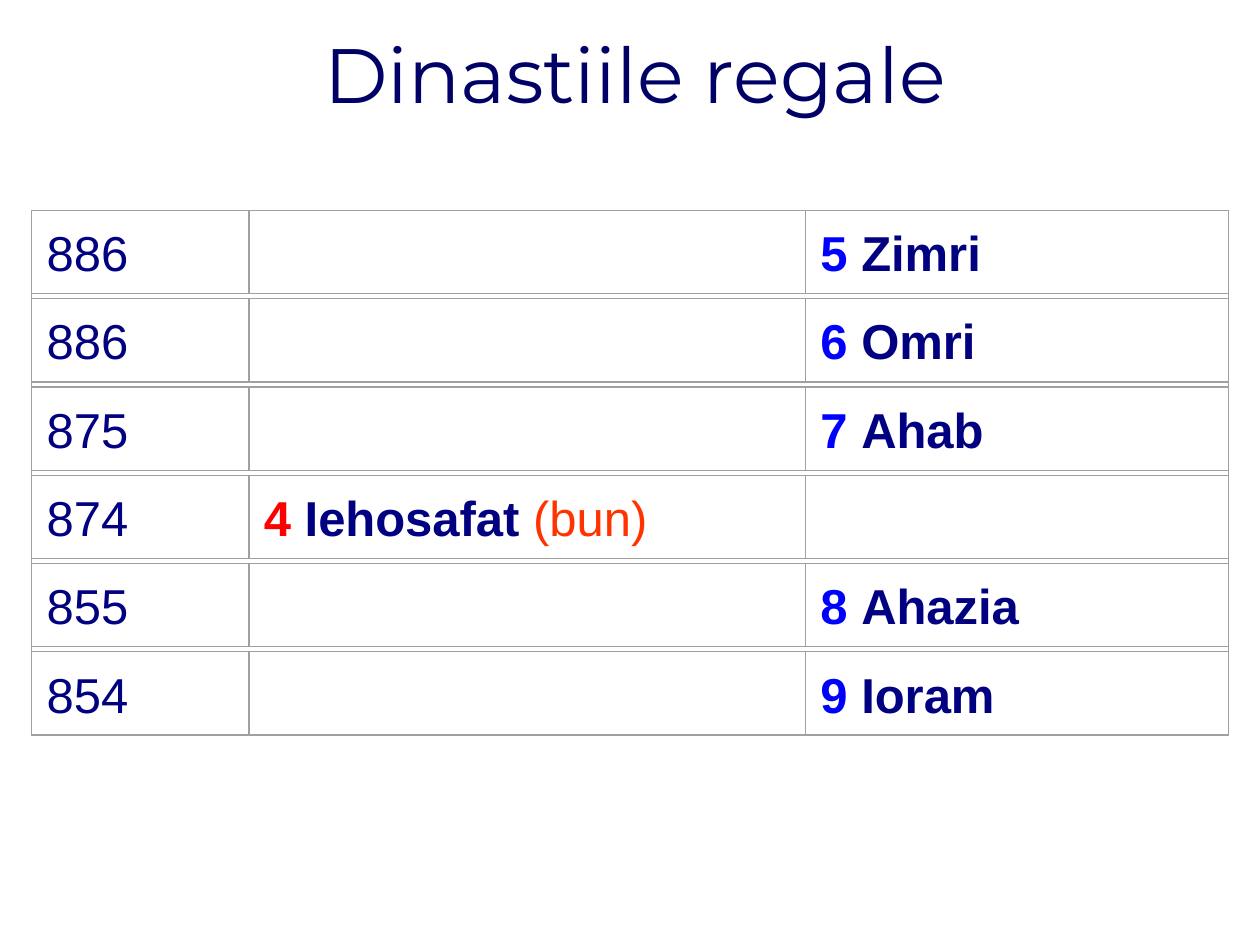
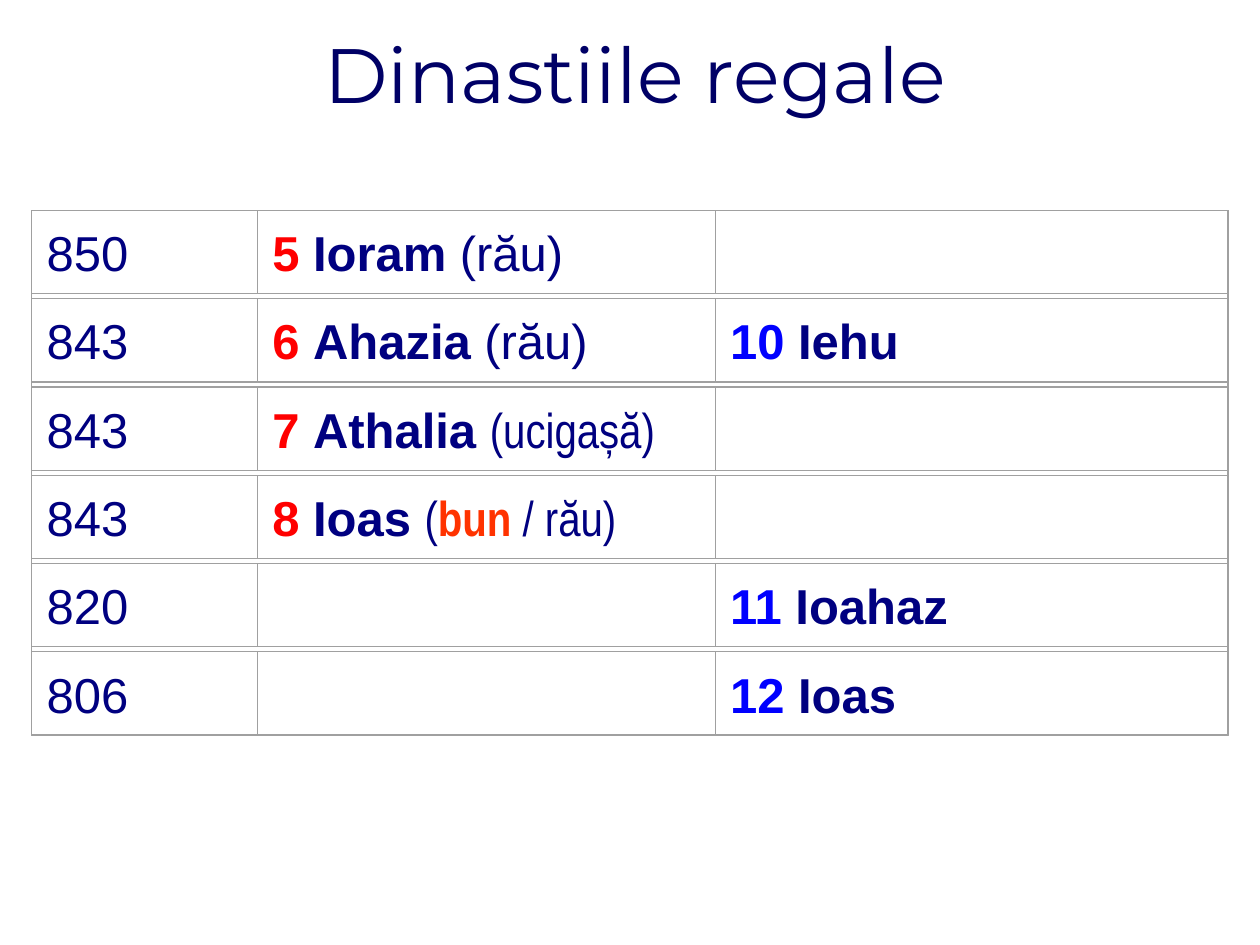
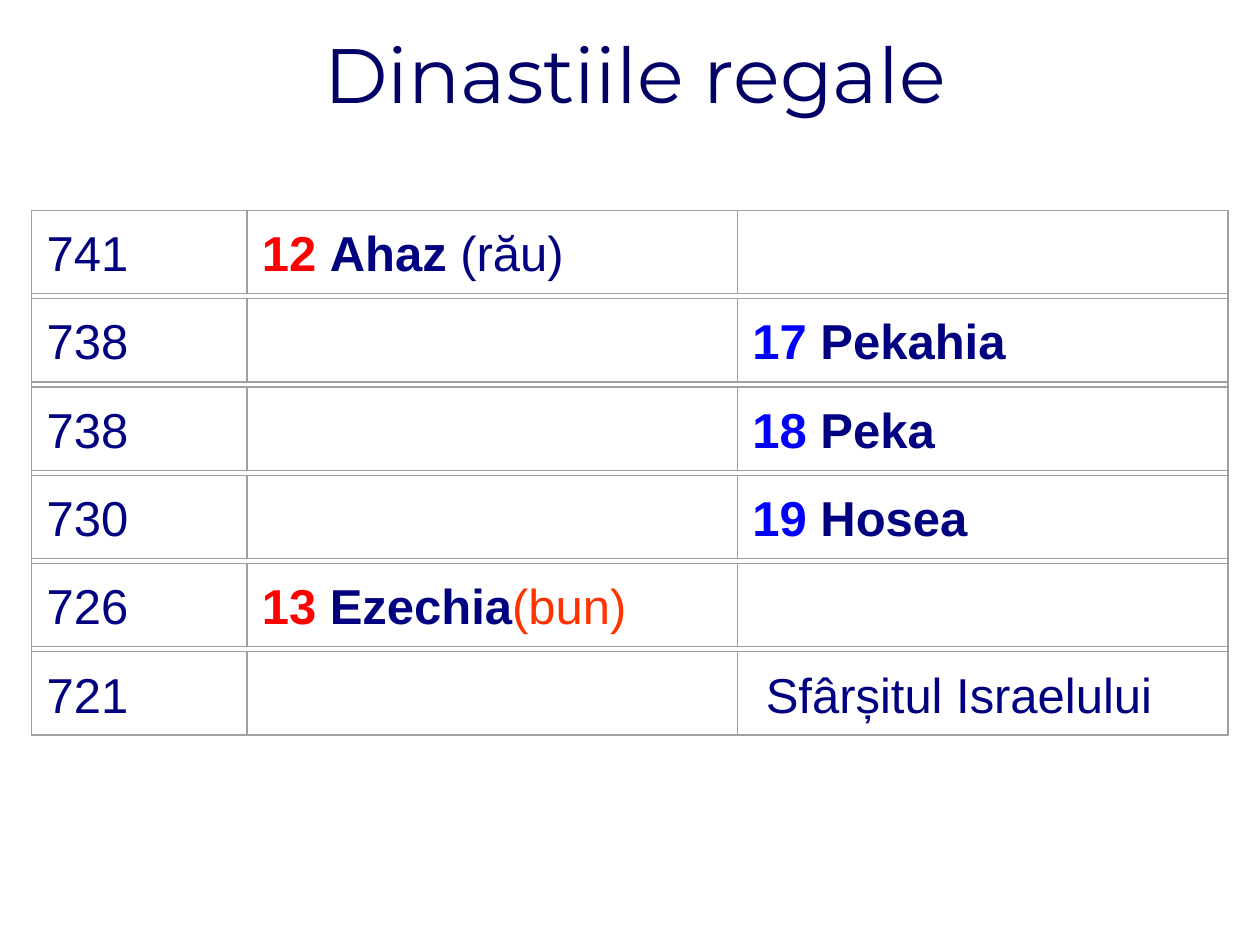
from dataclasses import dataclass

from pptx import Presentation
from pptx.dml.color import RGBColor
from pptx.enum.shapes import MSO_SHAPE as Preset
from pptx.enum.text import MSO_ANCHOR as Anchor, MSO_AUTO_SIZE as AutoSize, PP_ALIGN as Align
from pptx.util import Cm, Pt


@dataclass(frozen=True)
class Box:
    """A rectangle on the slide, in centimetres."""
    left: float
    top: float
    width: float
    height: float

    def lengths(self):
        """Return the four sides as slide lengths."""
        return Cm(self.left), Cm(self.top), Cm(self.width), Cm(self.height)


@dataclass(frozen=True)
class Style:
    """The look of one run of text."""
    color: str
    bold: bool = False
    font: str = "Arial"
    size: float = 28


@dataclass(frozen=True)
class Theme:
    """Colours, type and line widths shared by the slides."""
    title: Style = Style("000066", font="Montserrat", size=44)
    year: Style = Style("000080")
    judah: Style = Style("FF0000", bold=True)
    israel: Style = Style("0000FF", bold=True)
    name: Style = Style("000080", bold=True)
    verdict: Style = Style("000080")
    good: Style = Style("FF3300")
    narrow: Style = Style("000080", font="Arial Narrow")
    narrow_good: Style = Style("FF3300", bold=True, font="Arial Narrow")
    event: Style = Style("000080")
    border: str = "A0A0A0"
    cell_line: float = 0.75
    frame_line: float = 0.88


THEME = Theme()
TITLE = "Dinastiile regale"
TITLE_BOX = Box(0.64, 0.41, 24.33, 2.13)
TABLE_LEFT, TABLE_TOP = 0.64, 4.24
ROW_HEIGHT, ROW_PITCH = 1.68, 1.78
CELL_INSET, EVENT_INDENT = 0.3, 0.27


def judah(number, name, *verdict):
    """Return the runs for a king of Judah."""
    return [(f"{number} ", THEME.judah), (name, THEME.name), *verdict]


def israel(number, name):
    """Return the runs for a king of Israel."""
    return [(f"{number} ", THEME.israel), (name, THEME.name)]


BAD = ("(rău)", THEME.verdict)
GOOD = ("(bun)", THEME.good)

DYNASTIES = [
    ((4.38, 11.22, 8.53), [
        ("886", [], israel(5, "Zimri")),
        ("886", [], israel(6, "Omri")),
        ("875", [], israel(7, "Ahab")),
        ("874", judah(4, "Iehosafat ", GOOD), []),
        ("855", [], israel(8, "Ahazia")),
        ("854", [], israel(9, "Ioram")),
    ]),
    ((4.55, 9.23, 10.34), [
        ("850", judah(5, "Ioram ", BAD), []),
        ("843", judah(6, "Ahazia ", BAD), israel(10, "Iehu")),
        ("843", judah(7, "Athalia ", ("(ucigașă)", THEME.narrow)), []),
        ("843", judah(8, "Ioas ", ("(", THEME.narrow), ("bun ", THEME.narrow_good),
                      ("/ rău)", THEME.narrow)), []),
        ("820", [], israel(11, "Ioahaz")),
        ("806", [], israel(12, "Ioas")),
    ]),
    ((4.34, 9.89, 9.89), [
        ("741", judah(12, "Ahaz ", BAD), []),
        ("738", [], israel(17, "Pekahia")),
        ("738", [], israel(18, "Peka")),
        ("730", [], israel(19, "Hosea")),
        ("726", judah(13, "Ezechia", GOOD), []),
        ("721", [], [("Sfârșitul Israelului", THEME.event)]),
    ]),
]


def format_run(run, style):
    """Apply a style to a run."""
    run.font.name = style.font
    run.font.size = Pt(style.size)
    run.font.bold = style.bold
    run.font.color.rgb = RGBColor.from_string(style.color)


def add_title(slide, box):
    """Place and format the slide title."""
    title = slide.shapes.title
    title.left, title.top, title.width, title.height = box.lengths()
    frame = title.text_frame
    frame.text = TITLE
    frame.auto_size = AutoSize.NONE
    frame.vertical_anchor = Anchor.MIDDLE
    frame.paragraphs[0].alignment = Align.CENTER
    format_run(frame.paragraphs[0].runs[0], THEME.title)


def add_outline(slide, box, width):
    """Draw an unfilled rectangle and return it."""
    outline = slide.shapes.add_shape(Preset.RECTANGLE, *box.lengths())
    outline.shadow.inherit = False
    outline.fill.background()
    outline.line.color.rgb = RGBColor.from_string(THEME.border)
    outline.line.width = Pt(width)
    return outline


def add_cell(slide, box, runs):
    """Draw one bordered cell with its runs of text."""
    frame = add_outline(slide, box, THEME.cell_line).text_frame
    if not runs:
        return
    is_event = runs[0][0].startswith("Sfârșitul")
    frame.margin_left = Cm(CELL_INSET + (EVENT_INDENT if is_event else 0))
    frame.word_wrap = True
    frame.vertical_anchor = Anchor.MIDDLE
    paragraph = frame.paragraphs[0]
    paragraph.alignment = Align.LEFT
    for text, style in runs:
        run = paragraph.add_run()
        run.text = text
        format_run(run, style)


def add_dynasty_table(slide, left, top, widths, rows):
    """Draw the separated rows of reigns and the frame around them."""
    for index, (year, judah_king, israel_king) in enumerate(rows):
        cell_left = left
        cells = ([(year, THEME.year)], judah_king, israel_king)
        for width, runs in zip(widths, cells):
            box = Box(cell_left, top + index * ROW_PITCH, width, ROW_HEIGHT)
            add_cell(slide, box, runs)
            cell_left += width
    height = (len(rows) - 1) * ROW_PITCH + ROW_HEIGHT
    add_outline(slide, Box(left, top, sum(widths), height), THEME.frame_line)


def add_dynasty_slide(presentation, widths, rows):
    """Add a slide with the title and one table of reigns."""
    slide = presentation.slides.add_slide(presentation.slide_layouts[5])
    add_title(slide, TITLE_BOX)
    add_dynasty_table(slide, TABLE_LEFT, TABLE_TOP, widths, rows)


def main():
    """Build and save the presentation."""
    presentation = Presentation()
    presentation.slide_width, presentation.slide_height = Cm(25.4), Cm(19.05)
    for widths, rows in DYNASTIES:
        add_dynasty_slide(presentation, widths, rows)
    presentation.save("out.pptx")


if __name__ == "__main__":
    main()
